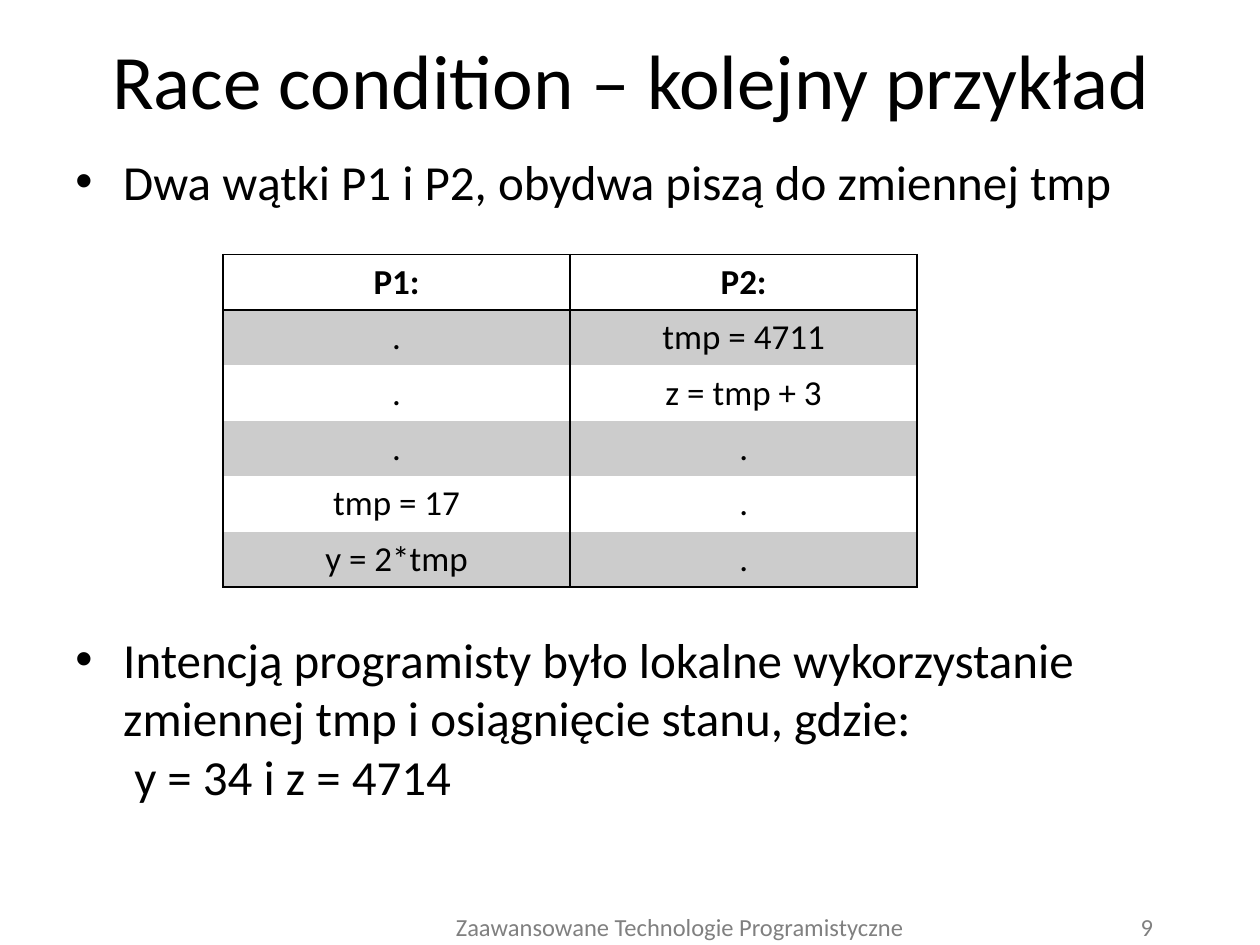
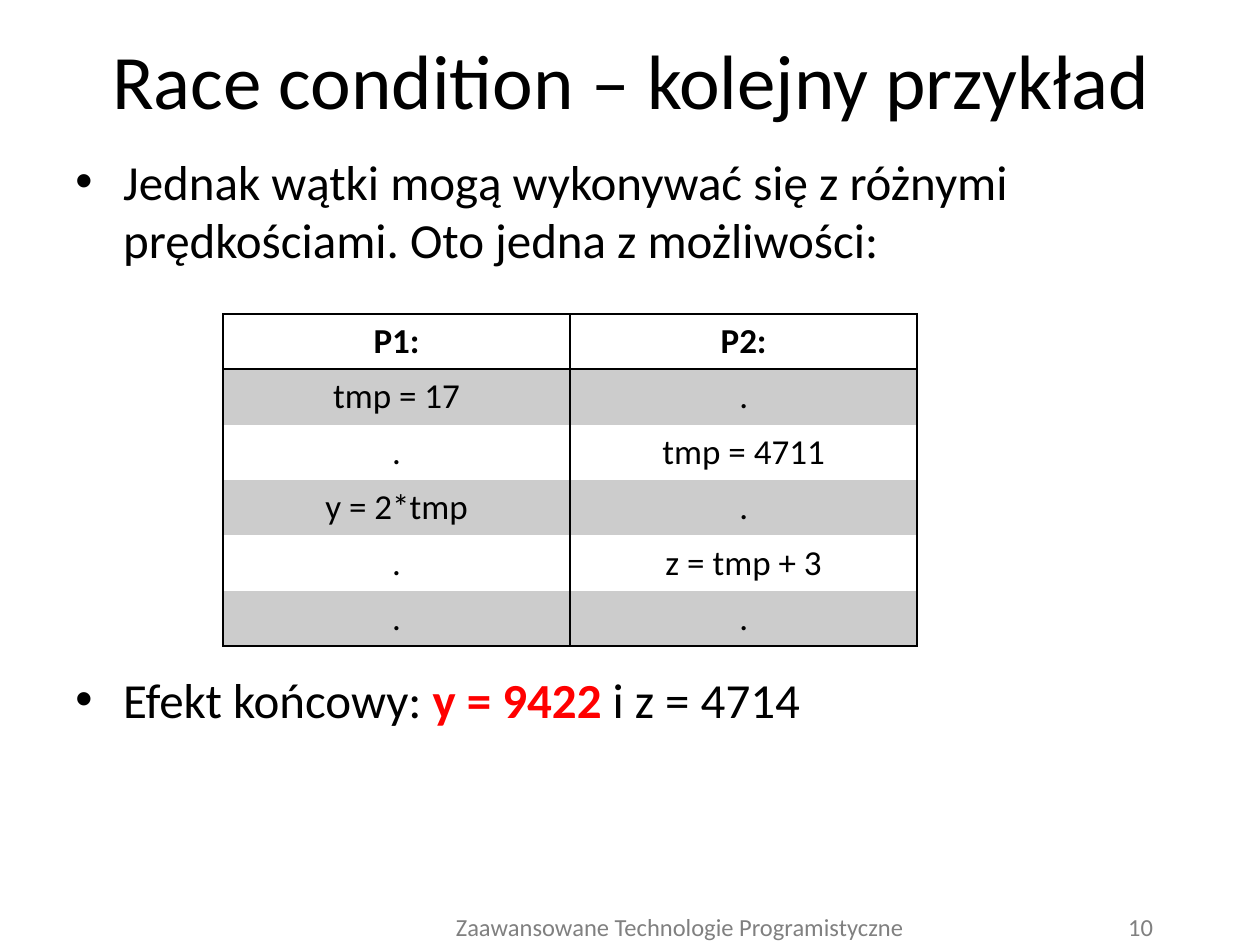
from lxml.etree import SubElement
from pptx import Presentation
from pptx.dml.color import RGBColor
from pptx.enum.text import MSO_ANCHOR, MSO_AUTO_SIZE, PP_ALIGN
from pptx.oxml.ns import qn
from pptx.util import Inches, Pt

COLORS = {"text": "000000", "band": "CCCCCC", "accent": "FF0000", "footer": "808080"}
FONT = "Calibri"
TITLE = "Race condition – kolejny przykład"
FOOTER = "Zaawansowane Technologie Programistyczne"
TITLE_BOX = (0.51, 0, 9, 1.25)
BODY_BOX = (0.5, 1.15, 9, 5.55)
FOOTER_BOX = (2.09, 7.19, 6.61, 0.31)
NUMBER_BOX = (8.7, 7.19, 0.55, 0.31)
TABLE_LEFT, TABLE_WIDTH, ROW_HEIGHT = 1.77, 5.51, 0.44
INDENT = 0.38

SLIDES = [
    {
        "number": "9",
        "intro": [("Dwa wątki P1 i P2, obydwa piszą do zmiennej tmp", "text", False)],
        "conclusion": [
            ("Intencją programisty było lokalne wykorzystanie zmiennej tmp "
             "i osiągnięcie stanu, gdzie:\n y = 34 i z = 4714", "text", False),
        ],
        "gap": 239.5,
        "table_top": 2.02,
        "steps": [
            ("P1:", "P2:"), (".", "tmp = 4711"), (".", "z = tmp + 3"),
            (".", "."), ("tmp = 17", "."), ("y = 2*tmp", "."),
        ],
    },
    {
        "number": "10",
        "intro": [
            ("Jednak wątki mogą wykonywać się z różnymi prędkościami. "
             "Oto jedna z możliwości:", "text", False),
        ],
        "conclusion": [
            ("Efekt końcowy: ", "text", False),
            ("y = 9422", "accent", True),
            (" i z = 4714", "text", False),
        ],
        "gap": 228.7,
        "table_top": 2.49,
        "steps": [
            ("P1:", "P2:"), ("tmp = 17", "."), (".", "tmp = 4711"),
            ("y = 2*tmp", "."), (".", "z = tmp + 3"), (".", "."),
        ],
    },
]


def add_span(para, text, size, color="text", bold=False):
    for index, line in enumerate(text.split("\n")):
        if index:
            para.add_line_break()
        span = para.add_run()
        span.text = line
        span.font.name = FONT
        span.font.size = Pt(size)
        span.font.bold = bold
        span.font.color.rgb = RGBColor.from_string(COLORS[color])


def add_text_frame(slide, box):
    frame = slide.shapes.add_textbox(*map(Inches, box)).text_frame
    frame.word_wrap = True
    return frame


def add_title(slide, box):
    title = slide.shapes.title
    title.left, title.top, title.width, title.height = map(Inches, box)
    frame = title.text_frame
    frame.auto_size = MSO_AUTO_SIZE.NONE
    frame.vertical_anchor = MSO_ANCHOR.MIDDLE
    para = frame.paragraphs[0]
    para.alignment = PP_ALIGN.CENTER
    add_span(para, TITLE, 44)


def add_bullet(para, spans, space_before):
    para.space_before = Pt(space_before)
    properties = para._p.get_or_add_pPr()
    properties.set("marL", str(Inches(INDENT)))
    properties.set("indent", str(-Inches(INDENT)))
    SubElement(properties, qn("a:buFont"), typeface="Arial")
    SubElement(properties, qn("a:buChar"), char="•")
    for text, color, bold in spans:
        add_span(para, text, 28, color, bold)


def add_body(slide, box, intro, conclusion, gap):
    frame = add_text_frame(slide, box)
    add_bullet(frame.paragraphs[0], intro, 0)
    add_bullet(frame.add_paragraph(), conclusion, gap)


def set_borders(cell, sides):
    properties = cell._tc.get_or_add_tcPr()
    for side in "LRTB":
        line = SubElement(properties, qn(f"a:ln{side}"), w=str(Pt(1)))
        if side in sides:
            fill = SubElement(line, qn("a:solidFill"))
            SubElement(fill, qn("a:srgbClr"), val=COLORS["text"])
        else:
            SubElement(line, qn("a:noFill"))


def add_steps_table(slide, box, steps):
    table = slide.shapes.add_table(len(steps), 2, *map(Inches, box)).table
    table.first_row = False
    table.horz_banding = False
    for row, texts in enumerate(steps):
        table.rows[row].height = Inches(ROW_HEIGHT)
        sides = "LR"
        if row <= 1:
            sides += "T"
        if row in (0, len(steps) - 1):
            sides += "B"
        for column, text in enumerate(texts):
            cell = table.cell(row, column)
            set_borders(cell, sides)
            if row % 2:
                cell.fill.solid()
                cell.fill.fore_color.rgb = RGBColor.from_string(COLORS["band"])
            else:
                cell.fill.background()
            cell.vertical_anchor = MSO_ANCHOR.MIDDLE
            para = cell.text_frame.paragraphs[0]
            para.alignment = PP_ALIGN.CENTER
            add_span(para, text, 20, bold=row == 0)


def add_footer_text(slide, box, text, alignment):
    para = add_text_frame(slide, box).paragraphs[0]
    para.alignment = alignment
    add_span(para, text, 14, "footer")


def add_example_slide(deck, content):
    slide = deck.slides.add_slide(deck.slide_layouts[5])
    add_body(slide, BODY_BOX, content["intro"], content["conclusion"], content["gap"])
    add_title(slide, TITLE_BOX)
    steps = content["steps"]
    table_box = (TABLE_LEFT, content["table_top"], TABLE_WIDTH, ROW_HEIGHT * len(steps))
    add_steps_table(slide, table_box, steps)
    add_footer_text(slide, FOOTER_BOX, FOOTER, PP_ALIGN.CENTER)
    add_footer_text(slide, NUMBER_BOX, content["number"], PP_ALIGN.RIGHT)


def main():
    deck = Presentation()
    deck.slide_width = Inches(10)
    deck.slide_height = Inches(7.5)
    for content in SLIDES:
        add_example_slide(deck, content)
    deck.save("out.pptx")


if __name__ == "__main__":
    main()
